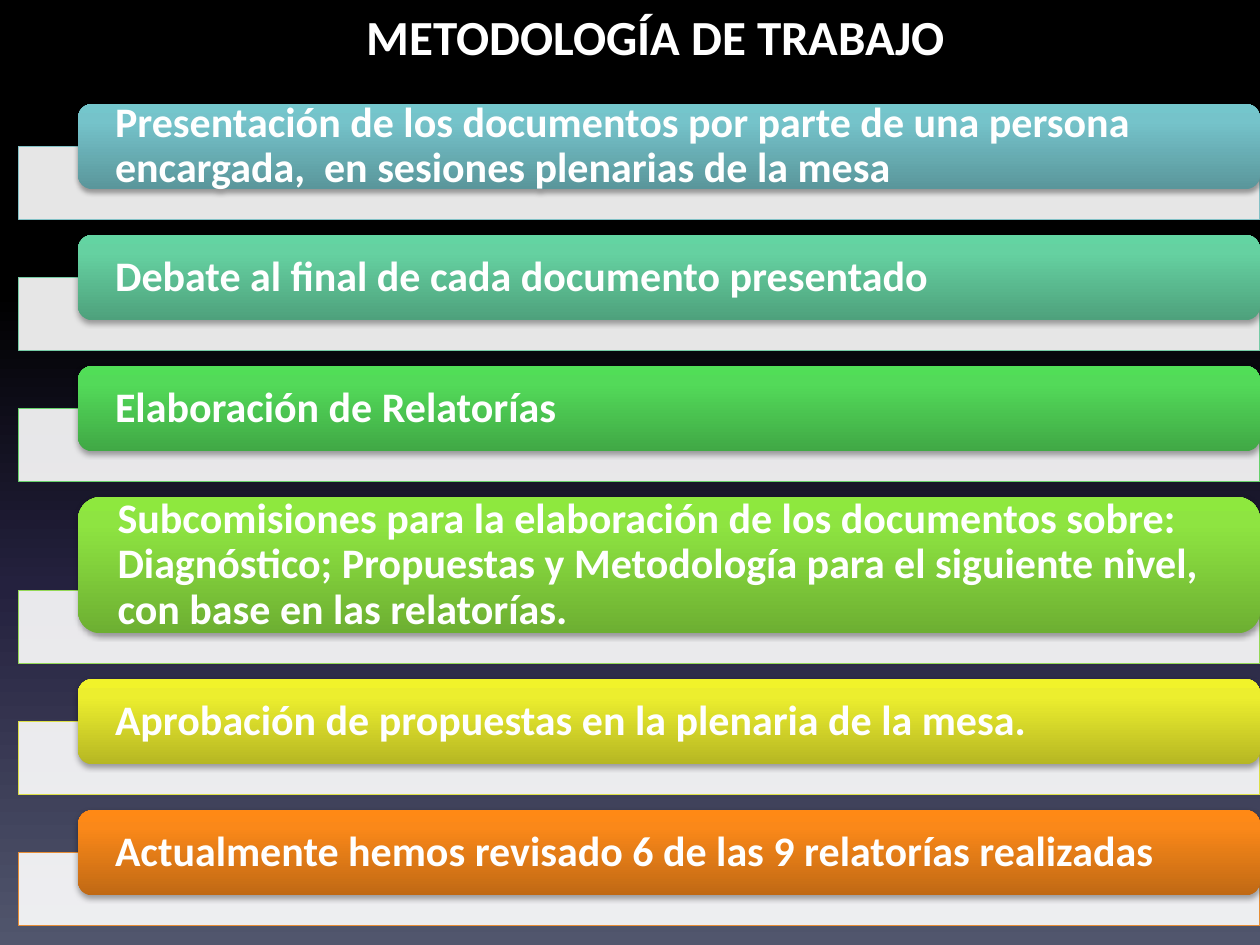
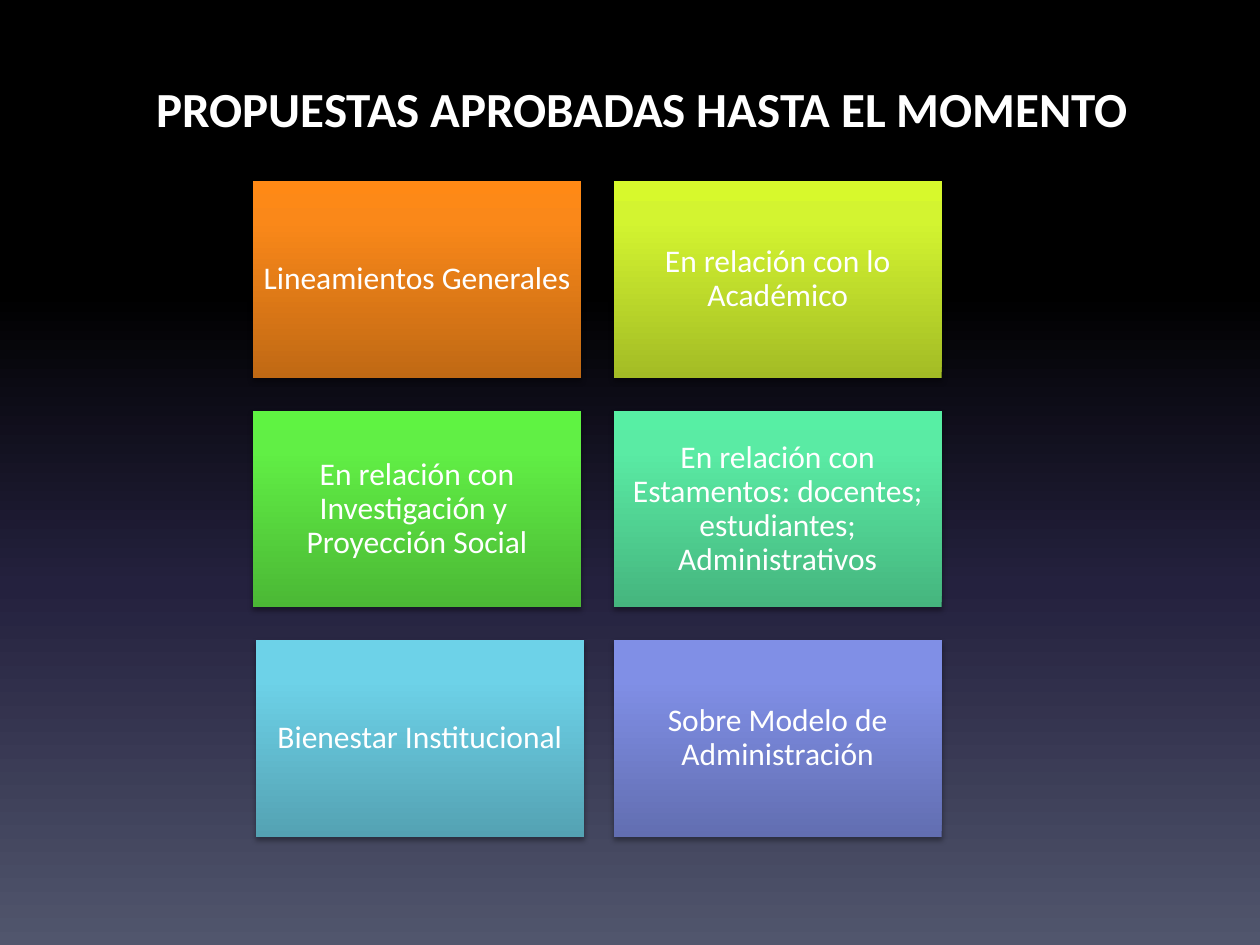
from dataclasses import dataclass

from lxml.etree import SubElement
from pptx import Presentation
from pptx.dml.color import RGBColor
from pptx.enum.shapes import MSO_SHAPE as Preset
from pptx.enum.text import MSO_ANCHOR as Anchor, MSO_AUTO_SIZE as AutoSize, PP_ALIGN as Align
from pptx.oxml.ns import qn
from pptx.util import Pt


@dataclass(frozen=True)
class Theme:
    width: float = 720
    height: float = 540
    font: str = "Calibri"
    title_size: float = 28
    step_size: float = 24
    tile_size: float = 18
    white: str = "FFFFFF"
    shadow: str = "000000"
    background: tuple = ((0, "000000"), (31, "000000"), (62, "24213E"), (100, "51566D"))


THEME = Theme()
TITLE_ONLY = 5
DOWNWARD, UPWARD = 270, 90

# Each step: text, height of its label, gradient from bottom to top, bar outline
LABEL, TALL_LABEL = 48.7, 77.8
STEPS = [
    ("Presentación de los documentos por parte de una persona encargada,  en sesiones plenarias de la mesa",
     LABEL, ("5A969B", "75C3CA", "74C6CC"), "83C1C6"),
    ("Debate al final de cada documento presentado",
     LABEL, ("4EA17C", "65D1A1", "63D4A2"), "75CBA5"),
    ("Elaboración de Relatorías",
     LABEL, ("40A845", "53DA59", "51DE57"), "66D16B"),
    ("Subcomisiones para la elaboración de los documentos sobre: Diagnóstico; Propuestas y "
     "Metodología para el siguiente nivel, con base en las relatorías.",
     TALL_LABEL, ("6DAF32", "8EE441", "8EE83E"), "94D856"),
    ("Aprobación de propuestas en la plenaria de la mesa.",
     LABEL, ("B6B723", "ECEE2E", "F1F32A"), "DDDF46"),
    ("Actualmente hemos revisado 6 de las 9 relatorías realizadas",
     LABEL, ("C06914", "FA8819", "FF8915"), "E78D35"),
]

# Each proposal: text, gradient from bottom to top, shift to the right
PROPOSALS = [
    ("Lineamientos Generales", ("C06914", "FA8819", "FF8915"), 0),
    ("En relación con lo Académico", ("A3BC25", "D3F430", "D7F92C"), 0),
    ("En relación con Investigación y  Proyección Social", ("4BB835", "61EF45", "5FF342"), 0),
    ("En relación con Estamentos: docentes; estudiantes; Administrativos",
     ("45B57E", "5AEBA4", "57EFA4"), 0),
    ("Bienestar Institucional", ("54A2B3", "6DD2E8", "6BD4EB"), 1.6),
    ("Sobre Modelo de Administración", ("626EB1", "808FE6", "7E8EE9"), 0),
]


def apply(target, **values):
    for name, value in values.items():
        setattr(target, name, value)


def set_gradient(fill, element, stops, angle):
    """Fill with any number of (percent, colour) stops; element holds the fill."""
    fill.gradient()
    fill.gradient_angle = angle
    stop_list = next(element.iter(qn("a:gsLst")))
    stop_list.clear()
    for percent, color in stops:
        stop = SubElement(stop_list, qn("a:gs"), pos=str(percent * 1000))
        SubElement(stop, qn("a:srgbClr"), val=color)


def add_shadow(shape):
    shape.shadow.inherit = False
    effects = next(shape.element.iter(qn("a:effectLst")))
    shadow = SubElement(effects, qn("a:outerShdw"), blurRad=str(Pt(3.1)), dist=str(Pt(1.8)),
                        dir="5400000", rotWithShape="0")
    color = SubElement(shadow, qn("a:srgbClr"), val=THEME.shadow)
    SubElement(color, qn("a:alpha"), val="35000")


def write_text(shape, text, size, bold, align, anchor, insets, line_spacing=None):
    """Write one paragraph; insets are the horizontal and vertical margins."""
    horizontal, vertical = map(Pt, insets)
    frame = shape.text_frame
    frame.text = text
    apply(frame, word_wrap=True, auto_size=AutoSize.NONE, vertical_anchor=anchor,
          margin_left=horizontal, margin_right=horizontal,
          margin_top=vertical, margin_bottom=vertical)
    paragraph = frame.paragraphs[0]
    apply(paragraph, alignment=align, line_spacing=line_spacing)
    font = paragraph.runs[0].font
    apply(font, name=THEME.font, size=Pt(size), bold=bold)
    font.color.rgb = RGBColor.from_string(THEME.white)


def add_titled_slide(presentation, title, left, top, width):
    slide = presentation.slides.add_slide(presentation.slide_layouts[TITLE_ONLY])
    shape = slide.shapes.title
    apply(shape, left=Pt(left), top=Pt(top), width=Pt(width), height=Pt(41))
    write_text(shape, title, THEME.title_size, True, Align.LEFT, Anchor.TOP, (7.2, 3.6))
    return slide


def add_glossy_shape(slide, preset, box, colors):
    shape = slide.shapes.add_shape(preset, *map(Pt, box))
    set_gradient(shape.fill, shape.element, zip((0, 80, 100), colors), UPWARD)
    shape.line.fill.background()
    add_shadow(shape)
    return shape


def add_bar(slide, box, outline):
    bar = slide.shapes.add_shape(Preset.RECTANGLE, *map(Pt, box))
    bar.shadow.inherit = False
    bar.fill.solid()
    bar.fill.fore_color.rgb = RGBColor.from_string(THEME.white)
    SubElement(next(bar.element.iter(qn("a:srgbClr"))), qn("a:alpha"), val="90000")
    bar.line.color.rgb = RGBColor.from_string(outline)
    bar.line.width = Pt(0.75)


def add_steps(slide):
    bar_left, label_left = 10.6, 44.6
    bar_height, overlap, gap = 41.6, 24.4, 9
    top = 59.4
    for text, height, colors, outline in STEPS:
        bar_top = top + height - overlap
        add_bar(slide, (bar_left, bar_top, THEME.width - bar_left, bar_height), outline)
        label = add_glossy_shape(slide, Preset.ROUNDED_RECTANGLE,
                                 (label_left, top, THEME.width - label_left, height), colors)
        write_text(label, text, THEME.step_size, True, Align.LEFT, Anchor.MIDDLE, (18.8, 0), 0.9)
        top = bar_top + bar_height + gap


def add_proposals(slide):
    left, top, width, height = 144.6, 103.6, 187.4, 112.4
    gap = 18.7
    for index, (text, colors, shift) in enumerate(PROPOSALS):
        row, column = divmod(index, 2)
        box = (left + column * (width + gap) + shift, top + row * (height + gap), width, height)
        tile = add_glossy_shape(slide, Preset.RECTANGLE, box, colors)
        write_text(tile, text, THEME.tile_size, False, Align.CENTER, Anchor.MIDDLE, (5, 5), 0.9)


def main():
    presentation = Presentation()
    apply(presentation, slide_width=Pt(THEME.width), slide_height=Pt(THEME.height))
    master = presentation.slide_master
    set_gradient(master.background.fill, master.element, THEME.background, DOWNWARD)

    add_steps(add_titled_slide(presentation, "METODOLOGÍA DE TRABAJO", 202.4, 0, 350))
    add_proposals(add_titled_slide(
        presentation, "PROPUESTAS APROBADAS HASTA EL MOMENTO", 82.2, 41, 583))
    presentation.save("out.pptx")


if __name__ == "__main__":
    main()
